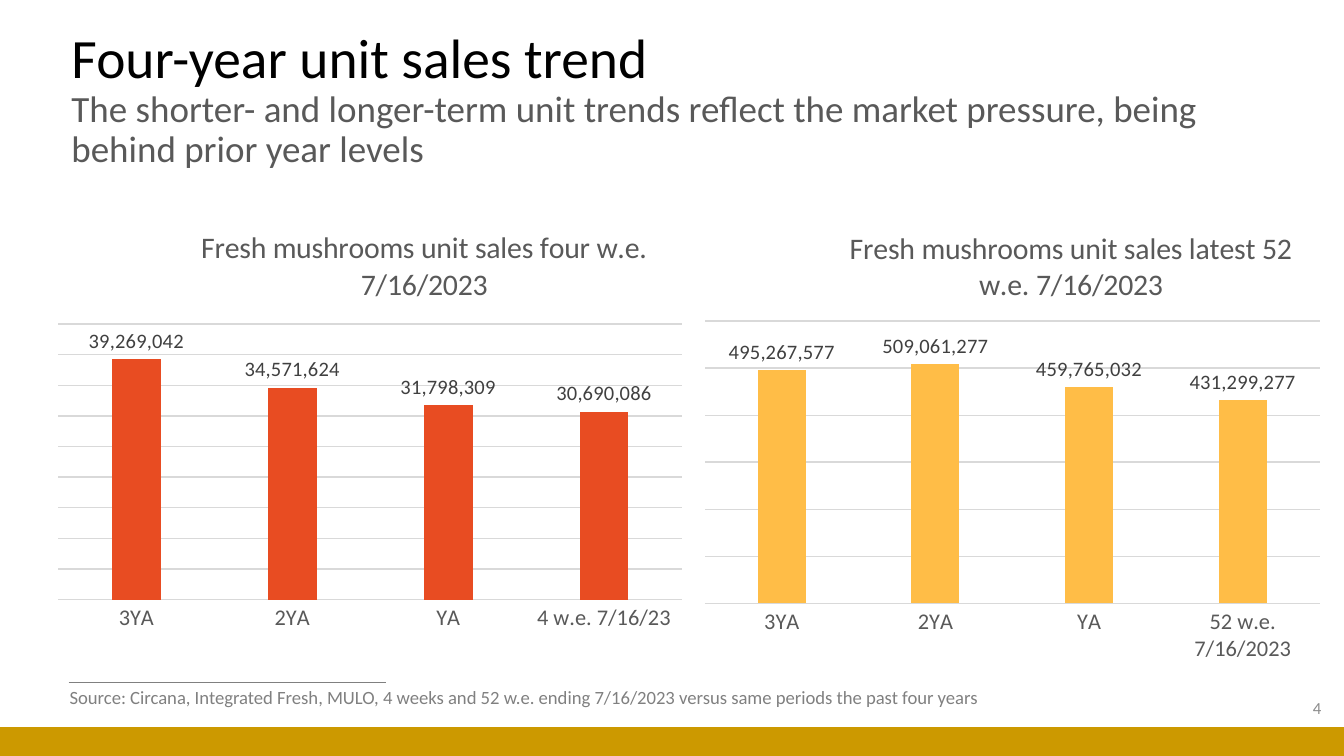
"""Build the four-year unit sales trend slide with two column charts."""
from lxml.etree import SubElement
from pptx import Presentation
from pptx.chart.data import CategoryChartData
from pptx.dml.color import RGBColor
from pptx.enum.chart import XL_CHART_TYPE, XL_LABEL_POSITION, XL_TICK_MARK
from pptx.enum.shapes import MSO_CONNECTOR, MSO_SHAPE
from pptx.enum.text import MSO_ANCHOR, PP_ALIGN
from pptx.oxml.ns import qn
from pptx.util import Inches, Pt

BLACK = RGBColor(0x00, 0x00, 0x00)
DARK_GRAY = RGBColor(0x59, 0x59, 0x59)
LABEL_GRAY = RGBColor(0x40, 0x40, 0x40)
SOURCE_GRAY = RGBColor(0x80, 0x80, 0x80)
NUMBER_GRAY = RGBColor(0x8C, 0x8C, 0x8C)
GRID_GRAY = RGBColor(0xD9, 0xD9, 0xD9)
GOLD = RGBColor(0xCC, 0x99, 0x00)
ORANGE = RGBColor(0xE8, 0x4C, 0x22)
AMBER = RGBColor(0xFF, 0xBD, 0x47)

presentation = Presentation()
presentation.slide_width = Inches(10)
presentation.slide_height = Inches(10 * 9 / 16)
slide = presentation.slides.add_slide(presentation.slide_layouts[6])
column = presentation.slide_width / 100
row = presentation.slide_height / 100


def grid_box(left, top, width, height):
    return int(left * column), int(top * row), int(width * column), int(height * row)


def set_layout(parent, **settings):
    layout = parent.find(qn("c:layout"))
    if layout is None:
        layout = SubElement(parent, qn("c:layout"))
        parent.insert(0, layout)
    manual = SubElement(layout, qn("c:manualLayout"))
    for name, value in settings.items():
        SubElement(manual, qn(f"c:{name}")).set("val", str(value))


rule = slide.shapes.add_connector(
    MSO_CONNECTOR.STRAIGHT, int(5.1 * column), int(90.31 * row), int(28.7 * column), int(90.31 * row))
rule.line.color.rgb = SOURCE_GRAY
rule.line.width = Pt(0.5)
SubElement(rule._element.spPr, qn("a:effectLst"))

band = slide.shapes.add_shape(MSO_SHAPE.RECTANGLE, *grid_box(0, 96.18, 100, 3.82))
band.shadow.inherit = False
band.fill.solid()
band.fill.fore_color.rgb = GOLD
band.line.fill.background()

texts = [
    ((4.34, 6.3, 90.6, 14.04), True, MSO_ANCHOR.MIDDLE, PP_ALIGN.LEFT, 0.9, [
        ("Four-year unit sales trend", 29.7, BLACK),
        ("The shorter- and longer-term unit trends reflect the market pressure, "
         "being behind prior year levels", 19.8, DARK_GRAY)]),
    ((76.8, 91.02, 22.5, 5.33), True, MSO_ANCHOR.MIDDLE, PP_ALIGN.RIGHT, 1.0, [
        ("4", 9, NUMBER_GRAY)]),
    ((4.2, 89.8, 71, 4.8), False, MSO_ANCHOR.TOP, PP_ALIGN.LEFT, 1.0, [
        ("Source: Circana, Integrated Fresh, MULO, 4 weeks and 52 w.e. ending 7/16/2023 "
         "versus same periods the past four years", 10, SOURCE_GRAY)]),
]
for box, wrap, anchor, alignment, spacing, runs in texts:
    frame = slide.shapes.add_textbox(*grid_box(*box)).text_frame
    frame.word_wrap = wrap
    frame.vertical_anchor = anchor
    paragraph = frame.paragraphs[0]
    paragraph.alignment = alignment
    paragraph.line_spacing = spacing
    for index, (text, size, color) in enumerate(runs):
        if index:
            paragraph.add_line_break()
        run = paragraph.add_run()
        run.text = text
        run.font.name = "Calibri"
        run.font.size = Pt(size)
        run.font.color.rgb = color

charts = [
    ((4.3, 27.56, 46.5, 58.84), "four w.e. 7/16/2023", "4 w.e. 7/16/23",
     (39269042, 34571624, 31798309, 30690086), ORANGE, 45000000, 5000000, (0.26, 1, 0.62)),
    ((52.4, 27.56, 47.2, 62.22), "latest 52 w.e. 7/16/2023", "52 w.e. 7/16/2023",
     (495267577, 509061277, 459765032, 431299277), AMBER, 600000000, 100000000, (0.24, 0.97, 0.6)),
]
for box, period, latest, values, color, maximum, unit, (top, width, height) in charts:
    data = CategoryChartData(number_format="#,##0")
    data.categories = ["3YA", "2YA", "YA", latest]
    data.add_series("Series 1", values)
    chart = slide.shapes.add_chart(XL_CHART_TYPE.COLUMN_CLUSTERED, *grid_box(*box), data).chart
    chart.has_legend = False
    chart.font.name = "Calibri"
    chart.font.size = Pt(10)
    chart.font.color.rgb = BLACK

    title = chart.chart_title
    run = title.text_frame.paragraphs[0].add_run()
    run.text = f"Fresh mushrooms unit sales {period}"
    run.font.name = "Calibri"
    run.font.size = Pt(16)
    run.font.bold = False
    run.font.color.rgb = DARK_GRAY
    set_layout(title._element, xMode="edge", yMode="edge", x=0.22, y=0.03)
    set_layout(chart._chartSpace.chart.plotArea, layoutTarget="inner", xMode="edge", yMode="edge",
               x=0, y=top, w=width, h=height)

    category_axis = chart.category_axis
    category_axis.major_tick_mark = XL_TICK_MARK.NONE
    category_axis.format.line.color.rgb = GRID_GRAY
    category_axis.format.line.width = Pt(0.75)
    category_axis.tick_labels.font.name = "Calibri"
    category_axis.tick_labels.font.size = Pt(12)
    category_axis.tick_labels.font.color.rgb = DARK_GRAY

    value_axis = chart.value_axis
    value_axis.visible = False
    value_axis.minimum_scale = 0
    value_axis.maximum_scale = maximum
    value_axis.major_unit = unit
    value_axis.major_gridlines.format.line.color.rgb = GRID_GRAY
    value_axis.major_gridlines.format.line.width = Pt(0.75)

    plot = chart.plots[0]
    plot.vary_by_categories = False
    plot.gap_width = 219
    plot.overlap = -27
    series = plot.series[0]
    series.format.fill.solid()
    series.format.fill.fore_color.rgb = color
    labels = series.data_labels
    labels.show_value = True
    labels.position = XL_LABEL_POSITION.OUTSIDE_END
    labels.number_format = "#,##0"
    labels.number_format_is_linked = False
    labels.font.name = "Calibri"
    labels.font.size = Pt(11)
    labels.font.color.rgb = LABEL_GRAY

presentation.save("out.pptx")
